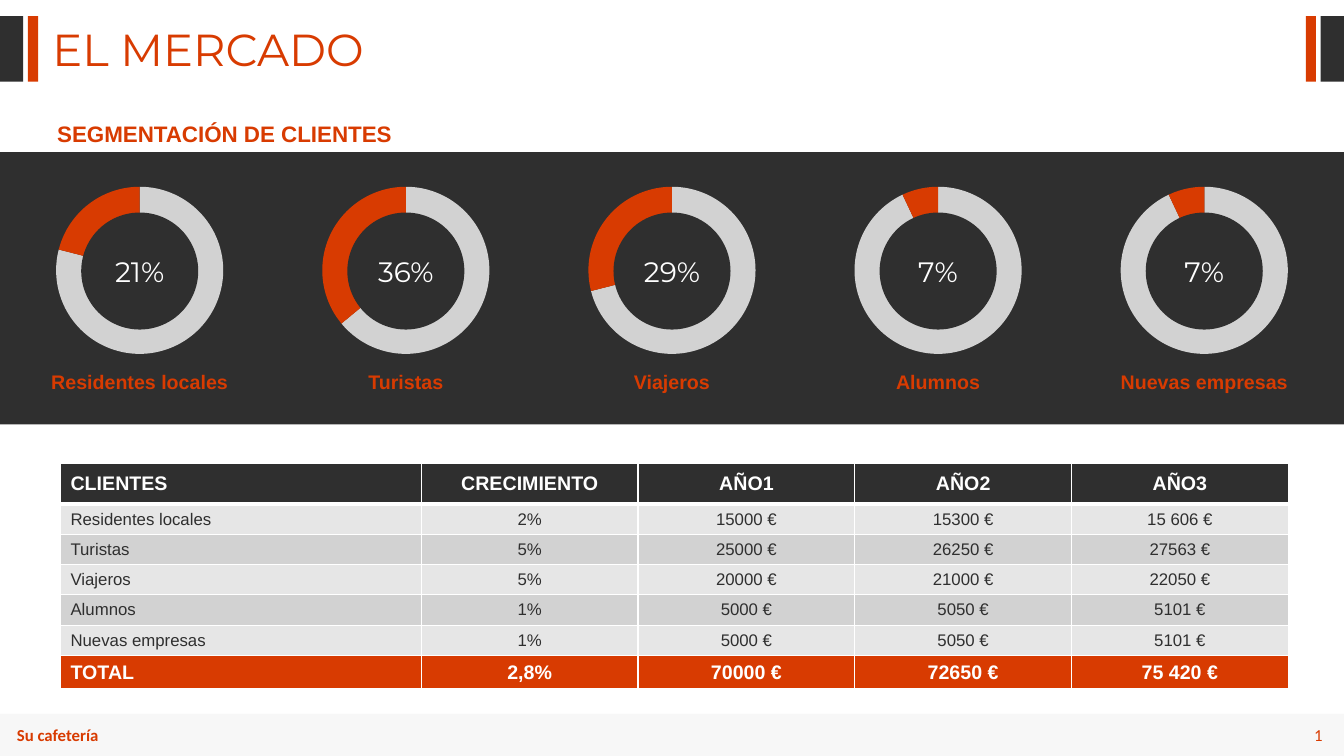
from lxml.etree import SubElement
from pptx import Presentation
from pptx.chart.data import CategoryChartData
from pptx.dml.color import RGBColor
from pptx.enum.chart import XL_CHART_TYPE as ChartType
from pptx.enum.shapes import MSO_SHAPE as Shape
from pptx.enum.text import MSO_ANCHOR as Anchor, MSO_AUTO_SIZE as AutoSize, PP_ALIGN as Align
from pptx.oxml import parse_xml
from pptx.oxml.ns import nsdecls, qn
from pptx.util import Pt

rgb = RGBColor.from_string
DARK, ORANGE, WHITE = "2F2F2F", "D83B01", "FFFFFF"
LIGHT_GREY, GREY = "E6E6E6", "D2D2D2"

prs = Presentation()
prs.slide_width, prs.slide_height = Pt(960), Pt(540)
slide = prs.slides.add_slide(prs.slide_layouts[5])
shapes = slide.shapes


def add_block(kind, left, top, width, height, color):
    block = shapes.add_shape(kind, Pt(left), Pt(top), Pt(width), Pt(height))
    block.shadow.inherit = False
    block.fill.solid()
    block.fill.fore_color.rgb = rgb(color)
    block.line.fill.background()
    return block


def write(frame, text, size, font, color, bold=False, align=Align.LEFT, anchor=Anchor.TOP):
    frame.vertical_anchor = anchor
    paragraph = frame.paragraphs[0]
    paragraph.text = text
    paragraph.alignment = align
    paragraph.font.size = Pt(size)
    paragraph.font.name = font
    paragraph.font.bold = bold
    paragraph.font.color.rgb = rgb(color)
    return paragraph


# Title
title = shapes.title
title.left, title.top, title.width, title.height = Pt(30.2), Pt(19.4), Pt(480), Pt(38.9)
title.text_frame.auto_size = AutoSize.NONE
write(title.text_frame, "EL MERCADO", 32, "Montserrat", ORANGE).line_spacing = 0.8

# Bars at both ends of the title, mirrored
for left, width, color in [(0, 16.6, DARK), (20, 7.2, ORANGE)]:
    for bar_left in (left, 960 - left - width):
        add_block(Shape.RECTANGLE, bar_left, 11.5, width, 46.8, color)

# Footer band
footer_band = add_block(Shape.RECTANGLE, 0, 510, 960, 30, LIGHT_GREY)
band_color = footer_band.fill._xPr.find(qn("a:solidFill"))[0]
SubElement(band_color, qn("a:alpha"), val="30000")

footer = shapes.add_textbox(Pt(5), Pt(514), Pt(132.5), Pt(21.8)).text_frame
footer.word_wrap = True
write(footer, "Su cafetería", 12, "Calibri", ORANGE, bold=True)

# Slide number as a live field
page = shapes.add_textbox(Pt(889.2), Pt(514), Pt(62.6), Pt(21.8)).text_frame
page.word_wrap = True
number = write(page, "", 12, "Calibri", ORANGE, align=Align.RIGHT, anchor=Anchor.MIDDLE)
number._p.append(parse_xml(
    f'<a:fld {nsdecls("a")} id="{{B6F15528-21DE-4FAA-801E-634DDDAF4B2B}}" type="slidenum">'
    f'<a:rPr lang="es-ES" sz="1200"><a:solidFill><a:srgbClr val="{ORANGE}"/></a:solidFill>'
    '<a:latin typeface="Calibri"/></a:rPr><a:t>4</a:t></a:fld>'))

# Customer segments
heading = shapes.add_textbox(Pt(33.8), Pt(82), Pt(282), Pt(26.6)).text_frame
heading.word_wrap = True
write(heading, "SEGMENTACIÓN DE CLIENTES", 16, "Arial", ORANGE, bold=True)
add_block(Shape.RECTANGLE, 0, 108.7, 960, 194.4, DARK)

segments = [("Residentes locales", 21), ("Turistas", 36), ("Viajeros", 29),
            ("Alumnos", 7), ("Nuevas empresas", 7)]
for i, (segment, share) in enumerate(segments):
    center = 480 + 190.1 * (i - 2)

    # Pie of the share, with its plot area fixed
    data = CategoryChartData()
    data.categories = ["1", "2"]
    data.add_series("Series 1", (100 - share, share))
    pie = shapes.add_chart(ChartType.PIE, Pt(center - 69.8), Pt(108.7),
                           Pt(139.6), Pt(170.6), data).chart
    pie.has_legend = pie.has_title = False
    pie.font.size, pie.font.name = Pt(10), "Calibri"
    pie.font.color.rgb = rgb("000000")
    pie.plots[0].vary_by_categories = True
    for index, color in enumerate((GREY, ORANGE)):
        sector = pie.plots[0].series[0].points[index].format
        sector.fill.solid()
        sector.fill.fore_color.rgb = rgb(color)
        sector.line.fill.background()
    plot_area = pie._chartSpace.chart.plotArea
    for old_layout in plot_area.findall(qn("c:layout")):
        plot_area.remove(old_layout)
    plot_area.insert(0, parse_xml(
        f'<c:layout {nsdecls("c")}><c:manualLayout><c:layoutTarget val="inner"/>'
        '<c:xMode val="edge"/><c:yMode val="edge"/><c:x val="0.07"/><c:y val="0.145"/>'
        '<c:w val="0.86"/><c:h val="0.7"/></c:manualLayout></c:layout>'))

    # Hole with the percentage
    hole = add_block(Shape.OVAL, center - 41.8, 151.8, 83.6, 83.6, DARK).text_frame
    hole.margin_left = hole.margin_right = 0
    write(hole, f"{share}%", 20, "Montserrat", WHITE, align=Align.CENTER, anchor=Anchor.MIDDLE)

    label = shapes.add_textbox(Pt(center - 70.5), Pt(260.6), Pt(141), Pt(24.2)).text_frame
    label.word_wrap = False
    write(label, segment, 14, "Arial", ORANGE, bold=True, align=Align.CENTER)

# Customer table
rows = [
    ("CLIENTES", "CRECIMIENTO", "AÑO1", "AÑO2", "AÑO3"),
    ("Residentes locales", "2%", "15000 €", "15300 €", "15 606 €"),
    ("Turistas", "5%", "25000 €", "26250 €", "27563 €"),
    ("Viajeros", "5%", "20000 €", "21000 €", "22050 €"),
    ("Alumnos", "1%", "5000 €", "5050 €", "5101 €"),
    ("Nuevas empresas", "1%", "5000 €", "5050 €", "5101 €"),
    ("TOTAL", "2,8%", "70000 €", "72650 €", "75 420 €"),
]
total = len(rows) - 1
customers = shapes.add_table(len(rows), 5, Pt(43.2), Pt(331.2), Pt(877), Pt(160.2)).table
for c, width in enumerate([257.8] + [154.8] * 4):
    customers.columns[c].width = Pt(width)

for r, values in enumerate(rows):
    emphasis = r in (0, total)
    customers.rows[r].height = Pt({0: 28.8, total: 23.4}.get(r, 21.6))
    fill = {0: DARK, total: ORANGE}.get(r, LIGHT_GREY if r % 2 else GREY)
    borders = {"L": 1, "R": 1, "T": 3 if r == 1 else 1, "B": 3 if r == 0 else 1}
    for c, value in enumerate(values):
        cell = customers.cell(r, c)
        cell.fill.solid()
        cell.fill.fore_color.rgb = rgb(fill)
        cell.vertical_anchor = Anchor.MIDDLE
        write(cell.text_frame, value, 14 if emphasis else 12, "Arial",
              WHITE if emphasis else DARK, bold=emphasis,
              align=Align.CENTER if c else Align.LEFT)
        properties = cell._tc.get_or_add_tcPr()
        for position, (side, weight) in enumerate(borders.items()):
            properties.insert(position, parse_xml(
                f'<a:ln{side} {nsdecls("a")} w="{Pt(weight)}"><a:solidFill>'
                f'<a:srgbClr val="{WHITE}"/></a:solidFill></a:ln{side}>'))

prs.save("out.pptx")
